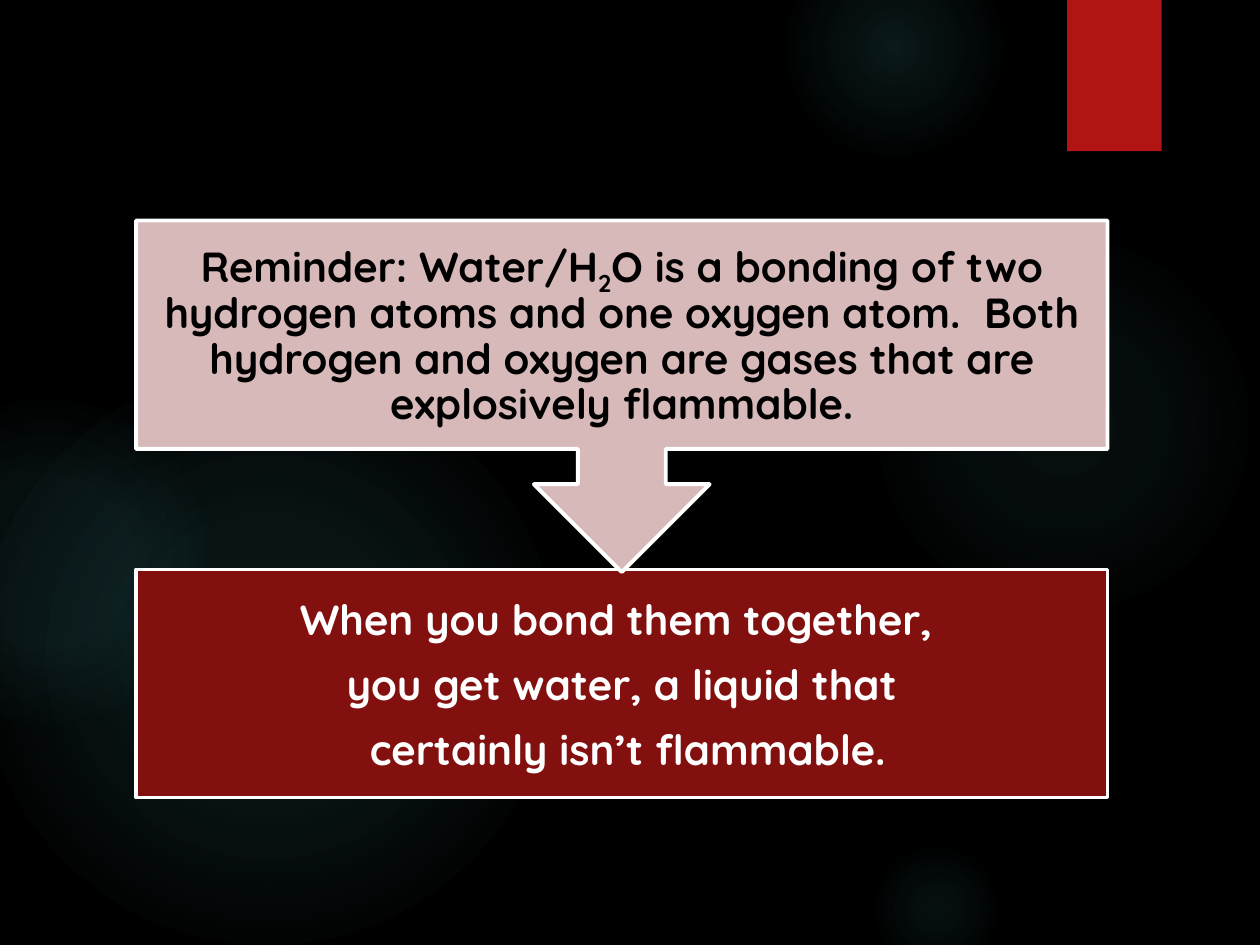
from pptx import Presentation
from pptx.dml.color import RGBColor
from pptx.enum import shapes, text
from pptx.oxml import parse_xml
from pptx.oxml.ns import nsdecls, qn
from pptx.util import Inches, Pt

BLACK = RGBColor(0x00, 0x00, 0x00)
WHITE = RGBColor(0xFF, 0xFF, 0xFF)
RED = RGBColor(0xB0, 0x15, 0x13)
DARK_RED = RGBColor(0x82, 0x10, 0x0E)
PINK = RGBColor(0xD8, 0xB9, 0xB9)
TEAL = RGBColor(0x50, 0xB9, 0xC1)

SHAPE = shapes.MSO_SHAPE
BOX_LEFT, BOX_WIDTH = 1.08, 7.71

GLOWS = [
    (6.89, 1.83, 3.08, [(0, 7), (36, 6), (69, 0)]),
    (6.22, -0.5, 1.75, [(0, 14), (36, 7), (73, 0)]),
    (6.89, 6.67, 1.08, [(0, 9), (36, 5), (66, 0)]),
    (-0.17, 2.92, 4.58, [(0, 11), (36, 10), (75, 0)]),
    (-0.92, 3.17, 2.58, [(0, 8), (36, 8), (72, 0)]),
]
REMINDER = [[
    ("Reminder: Water/H", 0),
    ("2", -25),
    ("O is a bonding of two hydrogen atoms and one oxygen atom.  Both "
     "hydrogen and oxygen are gases that are explosively flammable.", 0),
]]
RESULT = [
    [("When you bond them together, ", 0)],
    [("you get water, a liquid that", 0)],
    [(" certainly isn’t flammable.", 0)],
]


def set_all(obj, **values):
    for name, value in values.items():
        setattr(obj, name, value)


def add_shape(s, kind, left, top, width, height):
    sp = s.shapes.add_shape(kind, *map(Inches, (left, top, width, height)))
    sp.shadow.inherit = False
    sp.line.fill.background()
    return sp


def add_glow(s, left, top, size, stops):
    sp = add_shape(s, SHAPE.OVAL, left, top, size, size)
    sp.fill.gradient()
    stop_xml = "".join(
        f'<a:gs pos="{pos * 1000}"><a:srgbClr val="{TEAL}">'
        f'<a:alpha val="{alpha * 1000}"/></a:srgbClr></a:gs>'
        for pos, alpha in stops)
    grad = parse_xml(
        f'<a:gradFill {nsdecls("a")}><a:gsLst>{stop_xml}</a:gsLst>'
        '<a:path path="circle"><a:fillToRect l="50000" t="50000" '
        'r="50000" b="50000"/></a:path></a:gradFill>')
    sp_pr = sp._element.spPr
    sp_pr.replace(sp_pr.find(qn("a:gradFill")), grad)


def add_block(s, kind, left, top, width, height, color):
    sp = add_shape(s, kind, left, top, width, height)
    sp.fill.solid()
    sp.fill.fore_color.rgb = color
    return sp


def add_statement(s, kind, top, height, color, paragraphs, font_color, spacing):
    sp = add_block(s, kind, BOX_LEFT, top, BOX_WIDTH, height, color)
    sp.line.color.rgb = WHITE
    sp.line.width = Pt(2.25)
    tf = sp.text_frame
    margins = {f"margin_{side}": Inches(0.19)
               for side in ("left", "top", "right", "bottom")}
    set_all(tf, word_wrap=True, vertical_anchor=text.MSO_ANCHOR.MIDDLE, **margins)
    for i, runs in enumerate(paragraphs):
        p = tf.add_paragraph() if i else tf.paragraphs[0]
        set_all(p, alignment=text.PP_ALIGN.CENTER, line_spacing=spacing,
                space_after=Pt(8.4))
        for words, baseline in runs:
            r = p.add_run()
            r.text = words
            set_all(r.font, name="Quicksand", size=Pt(24), bold=True)
            r.font.color.rgb = font_color
            if baseline:
                r.font._element.set("baseline", str(baseline * 1000))


def main():
    prs = Presentation()
    set_all(prs, slide_width=Inches(10), slide_height=Inches(7.5))
    s = prs.slides.add_slide(prs.slide_layouts[6])
    s.background.fill.solid()
    s.background.fill.fore_color.rgb = BLACK
    for glow in GLOWS:
        add_glow(s, *glow)
    add_block(s, SHAPE.RECTANGLE, 8.47, 0, 0.75, 1.2, RED)
    add_statement(s, SHAPE.RECTANGLE, 4.52, 1.81, DARK_RED, RESULT, WHITE, 1.0)
    add_statement(s, SHAPE.DOWN_ARROW_CALLOUT, 1.75, 2.79, PINK, REMINDER,
                  BLACK, 0.9)
    prs.save("out.pptx")


if __name__ == "__main__":
    main()
